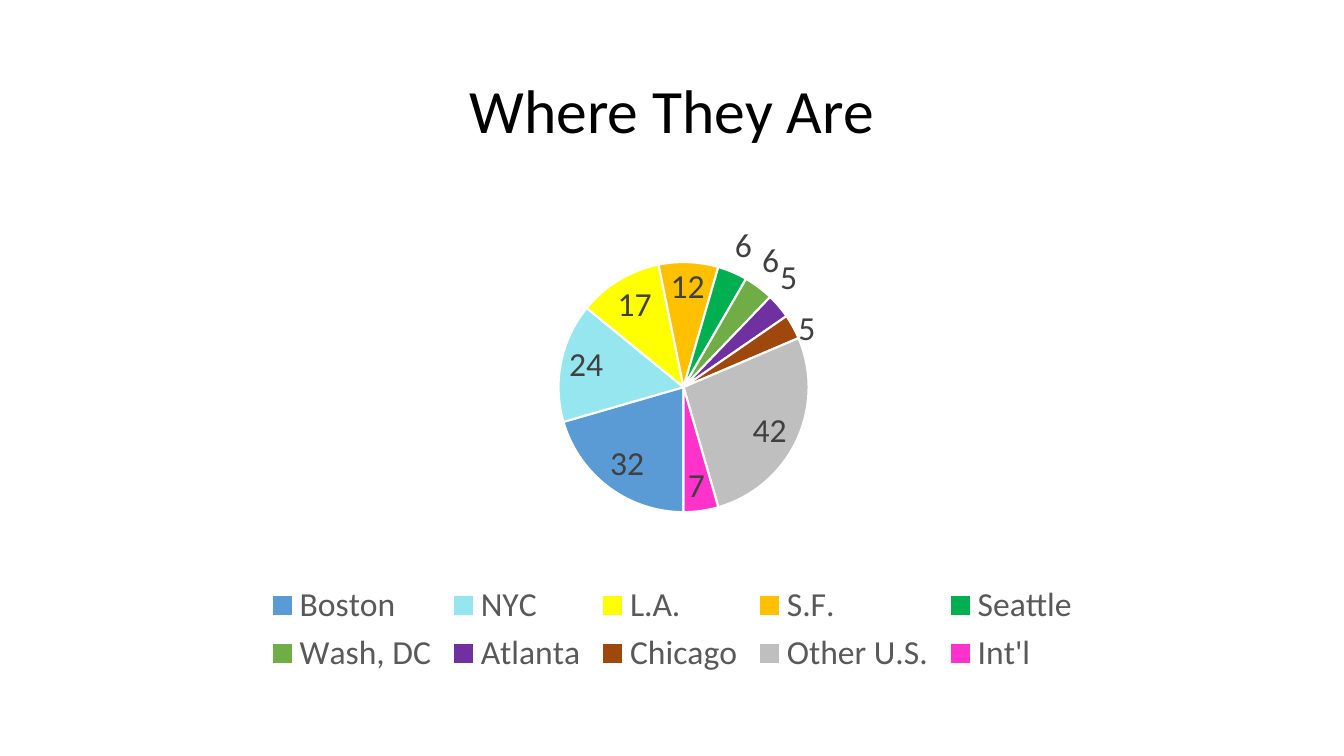
from dataclasses import dataclass

from lxml.etree import SubElement
from pptx import Presentation
from pptx.chart.data import CategoryChartData
from pptx.dml.color import RGBColor
from pptx.enum.chart import XL_CHART_TYPE as ChartType
from pptx.enum.chart import XL_LABEL_POSITION as LabelPosition
from pptx.enum.chart import XL_LEGEND_POSITION as LegendPosition
from pptx.enum.text import MSO_ANCHOR as Anchor
from pptx.enum.text import PP_ALIGN as Align
from pptx.oxml.ns import qn
from pptx.util import Cm, Pt

TITLE = "Where They Are"
SERIES = "Series 1"
# (city, count, slice colour)
LOCATIONS = [
    ("Boston", 32, "5B9BD5"),
    ("NYC", 24, "95E6EF"),
    ("L.A.", 17, "FFFF00"),
    ("S.F.", 12, "FFC000"),
    ("Seattle", 6, "00B050"),
    ("Wash, DC", 6, "70AD47"),
    ("Atlanta", 5, "7030A0"),
    ("Chicago", 5, "9E480E"),
    ("Other U.S.", 42, "BFBFBF"),
    ("Int'l", 7, "FF33CC"),
]
START_ANGLE = 180
PIE_LAYOUT = {"x": 0.4, "y": 0.13, "w": 0.22, "h": 0.52}  # fractions of the chart


@dataclass(frozen=True)
class Theme:
    font: str = "Calibri"
    title: str = "000000"
    legend: str = "595959"
    label: str = "404040"
    edge: str = "FFFFFF"
    title_size: int = 44
    chart_size: int = 24
    edge_width: float = 1.5


THEME = Theme()
SLIDE_WIDTH, SLIDE_HEIGHT = Cm(33.87), Cm(19.05)
MARGIN = Cm(2.33)
CONTENT_WIDTH = SLIDE_WIDTH - 2 * MARGIN


def format_font(font, *, size, color):
    font.name = THEME.font
    font.size = Pt(size)
    font.color.rgb = RGBColor.from_string(color)


def write_text(shape, text, *, size, color, align=Align.CENTER, spacing=0.9):
    frame = shape.text_frame
    frame.text = text
    frame.word_wrap = True
    frame.vertical_anchor = Anchor.MIDDLE
    paragraph = frame.paragraphs[0]
    paragraph.alignment = align
    paragraph.line_spacing = spacing
    format_font(paragraph.runs[0].font, size=size, color=color)


def place_pie(chart):
    """Fix the pie's place inside the chart and turn its first slice."""
    plot_area = chart.plots[0]._element.getparent()
    layout = plot_area.find(qn("c:layout"))
    if layout is None:
        layout = SubElement(plot_area, qn("c:layout"))
        plot_area.insert(0, layout)
    manual = SubElement(layout, qn("c:manualLayout"))
    settings = {"layoutTarget": "inner", "xMode": "edge", "yMode": "edge", **PIE_LAYOUT}
    for tag, value in settings.items():
        SubElement(manual, qn(f"c:{tag}")).set("val", str(value))

    pie = chart.plots[0]._element
    angle = pie.find(qn("c:firstSliceAng"))
    if angle is None:
        angle = SubElement(pie, qn("c:firstSliceAng"))
    angle.set("val", str(START_ANGLE))


def add_location_pie(slide):
    data = CategoryChartData()
    data.categories = [city for city, _, _ in LOCATIONS]
    data.add_series(SERIES, [count for _, count, _ in LOCATIONS])
    chart = slide.shapes.add_chart(
        ChartType.PIE, MARGIN, Cm(5.03), CONTENT_WIDTH, Cm(12.12), data
    ).chart
    chart.has_title = False
    chart.font.name = THEME.font
    chart.font.size = Pt(10)

    chart.has_legend = True
    chart.legend.position = LegendPosition.BOTTOM
    chart.legend.include_in_layout = False
    format_font(chart.legend.font, size=THEME.chart_size, color=THEME.legend)

    chart.plots[0].vary_by_categories = True
    counts = chart.plots[0].series[0]
    for index, (_, _, color) in enumerate(LOCATIONS):
        piece = counts.points[index].format
        piece.fill.solid()
        piece.fill.fore_color.rgb = RGBColor.from_string(color)
        piece.line.color.rgb = RGBColor.from_string(THEME.edge)
        piece.line.width = Pt(THEME.edge_width)

    labels = counts.data_labels
    labels.show_value = True
    labels.position = LabelPosition.BEST_FIT
    format_font(labels.font, size=THEME.chart_size, color=THEME.label)
    place_pie(chart)


def main():
    deck = Presentation()
    deck.slide_width, deck.slide_height = SLIDE_WIDTH, SLIDE_HEIGHT
    slide = deck.slides.add_slide(deck.slide_layouts.get_by_name("Title Only"))

    title = slide.shapes.title
    title.left, title.top = MARGIN, Cm(1.01)
    title.width, title.height = CONTENT_WIDTH, Cm(3.68)
    write_text(title, TITLE, size=THEME.title_size, color=THEME.title)
    add_location_pie(slide)
    deck.save("out.pptx")


if __name__ == "__main__":
    main()
